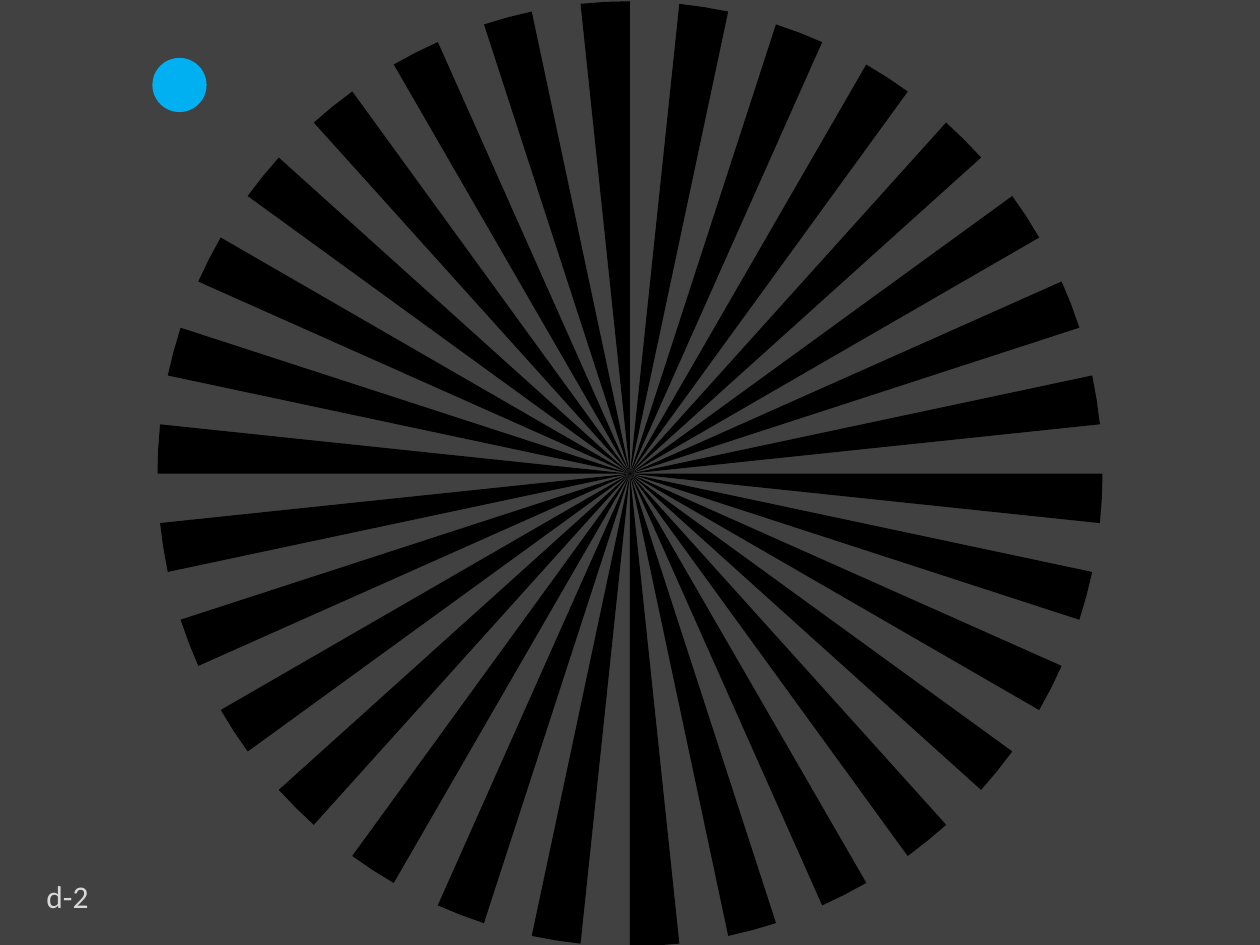
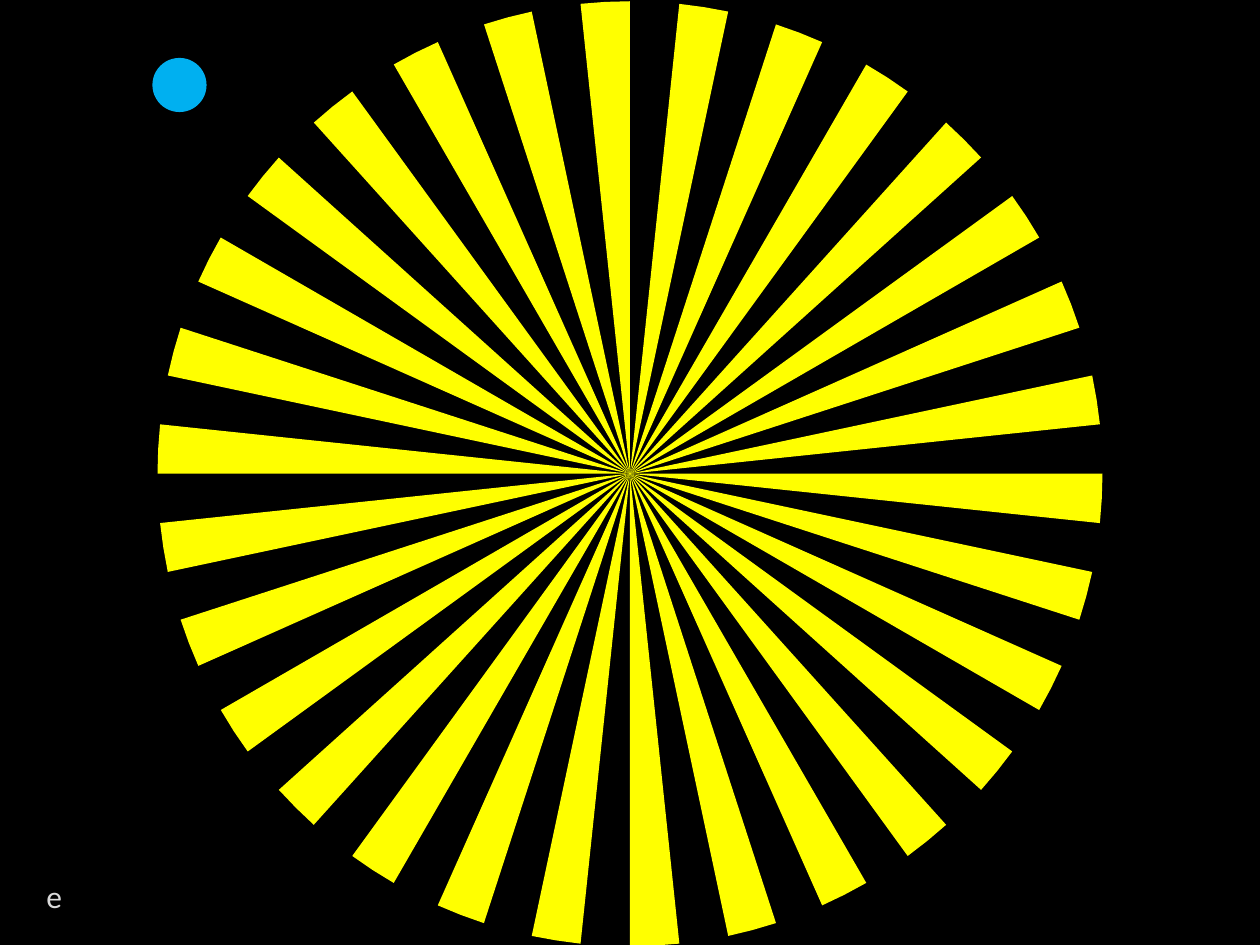
"""Build two slides of radial spokes with a blue dot and a label."""
import math

import pptx
import pptx.dml.color
import pptx.enum.shapes
import pptx.enum.text
import pptx.util

RGB = pptx.dml.color.RGBColor
GREY = RGB(0x41, 0x41, 0x41)
BLACK = RGB(0x00, 0x00, 0x00)
YELLOW = RGB(0xFF, 0xFF, 0x00)
BLUE = RGB(0x00, 0xB0, 0xF0)
PALE = RGB(0xD9, 0xD9, 0xD9)
COLS, ROWS = 100, 75
SPOKES = 30


class Deck:
    font = "Calibri"
    size = pptx.util.Pt(18)

    def __init__(self):
        self.show = pptx.Presentation()
        self.show.slide_width = pptx.util.Inches(10)
        self.show.slide_height = pptx.util.Inches(7.5)
        self.slide = None

    def x(self, col):
        return round(self.show.slide_width * col / COLS)

    def y(self, row):
        return round(self.show.slide_height * row / ROWS)

    def page(self, back):
        self.slide = self.show.slides.add_slide(self.show.slide_layouts[6])
        fill = self.slide.background.fill
        fill.solid()
        fill.fore_color.rgb = back

    def paint(self, shape, tint):
        shape.shadow.inherit = False
        shape.fill.solid()
        shape.fill.fore_color.rgb = tint
        shape.line.fill.background()

    def spoke(self, col, row, reach, start, sweep, tint):
        angles = [math.radians(start + sweep * part) for part in (0, 0.5, 1)]
        rim = [(self.x(col + reach * math.cos(a)), self.y(row + reach * math.sin(a)))
               for a in angles]
        pen = self.slide.shapes.build_freeform(self.x(col), self.y(row))
        pen.add_line_segments(rim, close=True)
        shape = pen.convert_to_shape()
        self.paint(shape, tint)
        return shape

    def wheel(self, col, row, reach, tint):
        step = 360 / SPOKES
        spokes = [self.spoke(col, row, reach, -step * i, step / 2, tint)
                  for i in range(SPOKES)]
        self.slide.shapes.add_group_shape(spokes)

    def dot(self, col, row, width, tint):
        oval = pptx.enum.shapes.MSO_SHAPE.OVAL
        shape = self.slide.shapes.add_shape(
            oval, self.x(col), self.y(row), self.x(width), self.y(width))
        self.paint(shape, tint)

    def label(self, text, col, row, width, height):
        box = self.slide.shapes.add_textbox(
            self.x(col), self.y(row), self.x(width), self.y(height))
        frame = box.text_frame
        frame.word_wrap = False
        frame.auto_size = pptx.enum.text.MSO_AUTO_SIZE.SHAPE_TO_FIT_TEXT
        frame.text = text
        font = frame.paragraphs[0].font
        font.name = self.font
        font.size = self.size
        font.color.rgb = PALE


def main():
    deck = Deck()
    for back, tint, name, width in ((GREY, BLACK, "d-2", 5.4),
                                    (BLACK, YELLOW, "e", 3.3)):
        deck.page(back)
        deck.wheel(50, 37.6, 37.5, tint)
        deck.dot(12.1, 4.6, 4.3, BLUE)
        deck.label(name, 2.7, 69.1, width, 4)
    deck.show.save("out.pptx")


if __name__ == "__main__":
    main()
